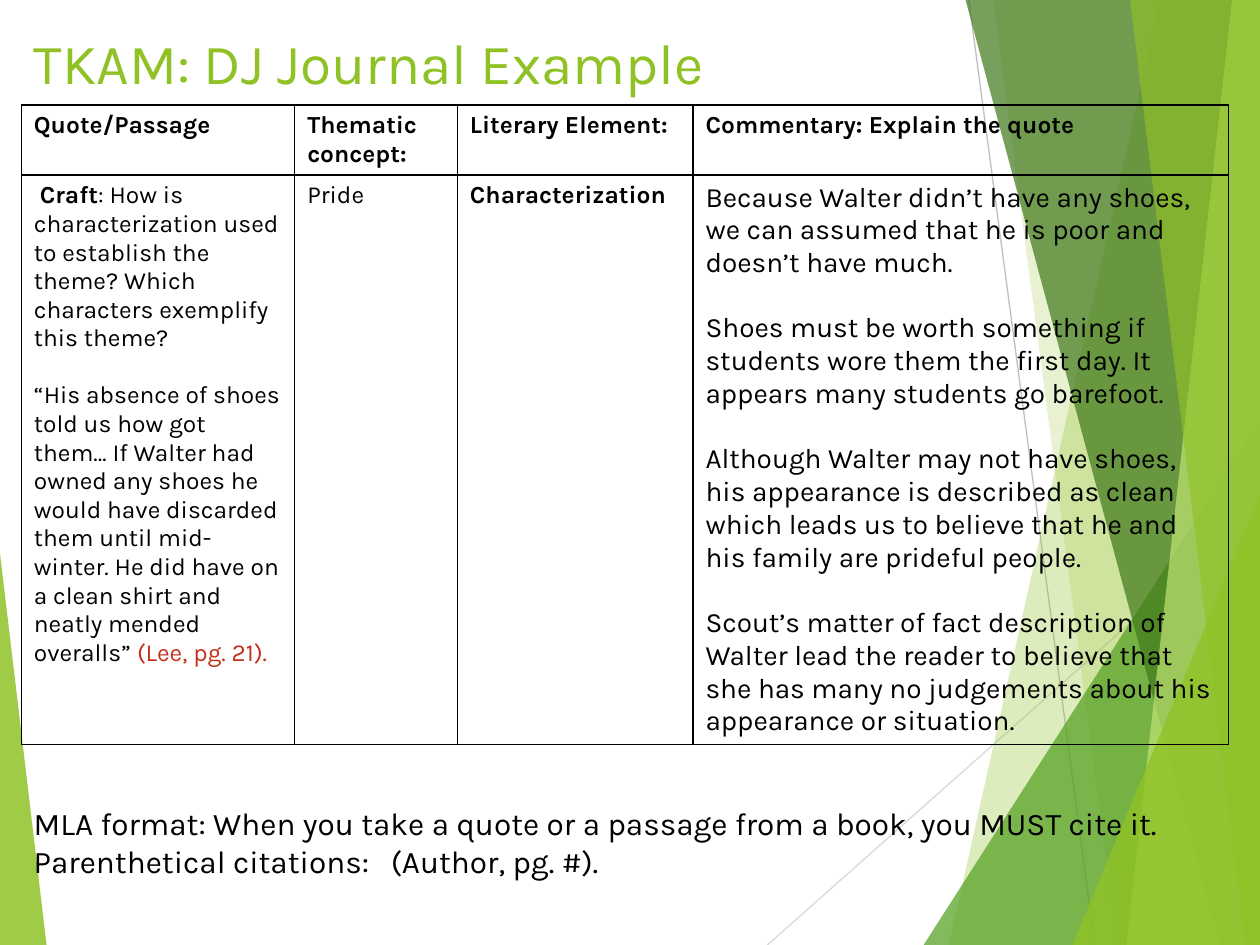
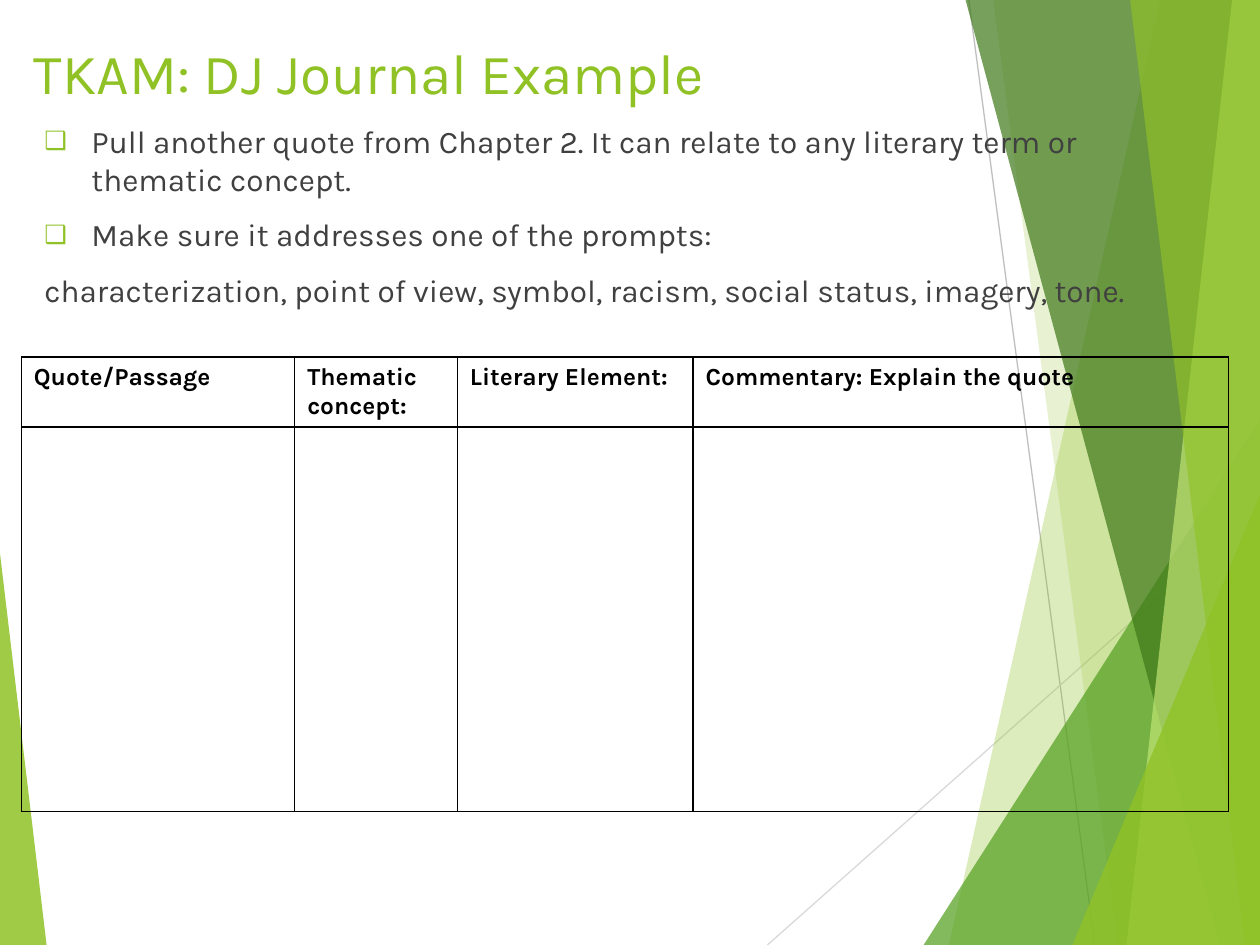
import pptx
import pptx.dml.color
import pptx.enum.shapes
import pptx.enum.text
import pptx.oxml
import pptx.oxml.ns
import pptx.util
from dataclasses import dataclass
from lxml import etree

Cm = pptx.util.Cm
Pt = pptx.util.Pt
qn = pptx.oxml.ns.qn
RGBColor = pptx.dml.color.RGBColor


@dataclass(frozen=True)
class Theme:
    font: str = "Karla"
    lime: str = "90C226"
    green: str = "54A021"
    forest: str = "3F7819"
    pale: str = "C0E474"
    ink: str = "000000"
    body: str = "404040"
    citation: str = "C42F1A"
    title_size: float = 32.4
    text_size: int = 18
    comment_size: int = 16
    cell_size: int = 14


theme = Theme()
TITLE = "TKAM: DJ Journal Example"
WIDTH, HEIGHT = 25.4, 19.05


def format_text(text_frame, size, colour=theme.ink, bold=False, space_before=0):
    """Format every run; the spacing goes above all paragraphs but the first."""
    for index, paragraph in enumerate(text_frame.paragraphs):
        paragraph.alignment = pptx.enum.text.PP_ALIGN.LEFT
        paragraph.space_before = Pt(space_before if index else 0)
        for run in paragraph.runs:
            run.font.name = theme.font
            run.font.size = Pt(size)
            run.font.bold = bold
            run.font.color.rgb = RGBColor.from_string(colour)


def add_journal_table(slide, top, answer_height):
    """Add the four-column journal grid with its header row."""
    headers = ["Quote/Passage", "Thematic concept:", "Literary Element:",
               "Commentary: Explain the quote"]
    column_widths = [5.51, 3.28, 4.75, 10.8]
    row_heights = [1.41, answer_height]
    table = slide.shapes.add_table(
        2, 4, Cm(0.43), Cm(top), Cm(sum(column_widths)), Cm(sum(row_heights))).table
    table.first_row = False
    table.horz_banding = False
    for column, width in zip(table.columns, column_widths):
        column.width = Cm(width)
    for row, height in zip(table.rows, row_heights):
        row.height = Cm(height)
    for cell in table.iter_cells():
        cell.fill.background()
        properties = cell._tc.get_or_add_tcPr()
        for position, side in enumerate(["lnL", "lnR", "lnT", "lnB"]):
            border = etree.Element(qn(f"a:{side}"), w=str(Pt(1)))
            fill = etree.SubElement(border, qn("a:solidFill"))
            etree.SubElement(fill, qn("a:srgbClr"), val=theme.ink)
            properties.insert(position, border)
    for cell, header in zip(table.rows[0].cells, headers):
        cell.text_frame.text = header
        format_text(cell.text_frame, theme.cell_size, bold=True)
    return table


presentation = pptx.Presentation()
presentation.slide_width = Cm(WIDTH)
presentation.slide_height = Cm(HEIGHT)
example_slide = presentation.slides.add_slide(presentation.slide_layouts[5])
practice_slide = presentation.slides.add_slide(presentation.slide_layouts[1])

# Background facets, drawn once and moved to the slide master
facets = []
for start_x, start_y, end_x, colour in [(19.53, 0, 22.07, "BFBFBF"),
                                        (WIDTH, 10.24, 15.47, "D9D9D9")]:
    line = example_slide.shapes.add_connector(
        pptx.enum.shapes.MSO_CONNECTOR.STRAIGHT,
        Cm(start_x), Cm(start_y), Cm(end_x), Cm(HEIGHT))
    line.line.color.rgb = RGBColor.from_string(colour)
    line.line.width = Pt(0.75)
    etree.SubElement(line.element.spPr, qn("a:effectLst"))
    facets.append(line)

# Bands: x at the top and bottom; triangles: left, top, right, apex
facet_plan = [
    ("band", (23.39, 19.13), theme.lime, 30),
    ("band", (20.02, 22.53), theme.lime, 20),
    ("triangle", (18.62, 8.46, WIDTH, 1), theme.green, 72),
    ("band", (19.46, 24.59), theme.forest, 70),
    ("band", (24.84, 22.71), theme.pale, 70),
    ("band", (22.78, 25.1), theme.lime, 65),
    ("triangle", (21.62, 9.98, WIDTH, 1), theme.lime, 80),
    ("triangle", (0, 11.15, 0.94, 0), theme.lime, 85),
]
for kind, geometry, colour, opacity in facet_plan:
    if kind == "band":
        top_x, bottom_x = geometry
        builder = example_slide.shapes.build_freeform(Cm(top_x), Cm(-0.02))
        builder.add_line_segments([(Cm(WIDTH), Cm(-0.02)), (Cm(WIDTH), Cm(HEIGHT)),
                                   (Cm(bottom_x), Cm(HEIGHT))], close=True)
        facet = builder.convert_to_shape()
    else:
        left, top, right, apex = geometry
        facet = example_slide.shapes.add_shape(
            pptx.enum.shapes.MSO_SHAPE.ISOSCELES_TRIANGLE,
            Cm(left), Cm(top), Cm(right - left), Cm(HEIGHT - top))
        facet.adjustments[0] = apex
    facet.shadow.inherit = False
    facet.line.fill.background()
    facet.fill.solid()
    facet.fill.fore_color.rgb = RGBColor.from_string(colour)
    colour_element = facet.element.spPr.find(".//" + qn("a:srgbClr"))
    etree.SubElement(colour_element, qn("a:alpha"), val=str(opacity * 1000))
    facets.append(facet)

master_tree = presentation.slide_master.shapes.element
for index, facet in enumerate(facets):
    facet.element[0][0].set("id", str(100 + index))
    master_tree.insert(2 + index, facet.element)

# Titles
for slide, top, height in [(example_slide, 0.43, 1.27), (practice_slide, 0.64, 1.07)]:
    title = slide.shapes.title
    title.left, title.top, title.width, title.height = Cm(0.43), Cm(top), Cm(17.9), Cm(height)
    title.text_frame.text = TITLE
    title.text_frame.auto_size = pptx.enum.text.MSO_AUTO_SIZE.NONE
    title.text_frame.vertical_anchor = pptx.enum.text.MSO_ANCHOR.TOP
    format_text(title.text_frame, theme.title_size, theme.lime)

# Slide 1: completed journal entry
journal = add_journal_table(example_slide, 2.12, 11.46)
quote_cell, concept_cell, element_cell, commentary_cell = journal.rows[1].cells

quote_cell.text_frame.text = (
    " \n“His absence of shoes told us how got them… If Walter had owned any shoes he "
    "would have discarded them until mid-winter. He did have on a clean shirt and "
    "neatly mended overalls” ")
prompt, quote = quote_cell.text_frame.paragraphs
craft = prompt.add_run()
craft.text = "Craft"
prompt.add_run().text = (": How is characterization used to establish the theme? "
                         "Which characters exemplify this theme?")
citation = quote.add_run()
citation.text = "(Lee, pg. 21)."
format_text(quote_cell.text_frame, theme.cell_size, space_before=16.4)
craft.font.bold = True
citation.font.color.rgb = RGBColor.from_string(theme.citation)

concept_cell.text_frame.text = "Pride"
format_text(concept_cell.text_frame, theme.cell_size)
element_cell.text_frame.text = "Characterization"
format_text(element_cell.text_frame, theme.cell_size, bold=True)

commentary_cell.text_frame.text = "\n".join([
    "Because Walter didn’t have any shoes, we can assumed that he is poor and "
    "doesn’t have much.",
    "Shoes must be worth something if students wore them the first day. It appears "
    "many students go barefoot.",
    "Although Walter may not have shoes, his appearance is described as clean which "
    "leads us to believe that he and his family are prideful people.",
    "Scout’s matter of fact description of Walter lead the reader to believe that she "
    "has many no judgements about his appearance or situation.",
])
format_text(commentary_cell.text_frame, theme.comment_size, space_before=18.7)

# Slide 1: citation rule, with a tab stop before the pattern
citation_rule = example_slide.shapes.add_textbox(Cm(0.43), Cm(16.08), Cm(23.93), Cm(1.8))
citation_rule.text_frame.word_wrap = True
citation_rule.text_frame.text = (
    "MLA format: When you take a quote or a passage from a book, you MUST cite it.\n"
    "Parenthetical citations:\t(Author, pg. #).")
format_text(citation_rule.text_frame, theme.text_size)
pattern_properties = citation_rule.text_frame.paragraphs[1]._p.get_or_add_pPr()
tab_stops = etree.SubElement(pattern_properties, qn("a:tabLst"))
etree.SubElement(tab_stops, qn("a:tab"), pos=str(Cm(7.2)), algn="l")

# Slide 2: instructions
instructions = practice_slide.placeholders[1]
instructions.left, instructions.top = Cm(0.64), Cm(2.34)
instructions.width, instructions.height = Cm(23.29), Cm(10.77)
instructions.text_frame.auto_size = pptx.enum.text.MSO_AUTO_SIZE.NONE
instructions.text_frame.text = (
    "Pull another quote from Chapter 2. It can relate to any literary term or "
    "thematic concept.\n"
    "Make sure it addresses one of the prompts:\n"
    "characterization, point of view, symbol, racism, social status, imagery, tone.")
format_text(instructions.text_frame, theme.text_size, theme.body, space_before=10)
for paragraph, bulleted in zip(instructions.text_frame.paragraphs, [True, True, False]):
    properties = paragraph._p.get_or_add_pPr()
    indent = Cm(0.95) if bulleted else 0
    properties.set("marL", str(indent))
    properties.set("indent", str(-indent))
    if bulleted:
        bullet_colour = etree.SubElement(properties, qn("a:buClr"))
        etree.SubElement(bullet_colour, qn("a:srgbClr"), val=theme.lime)
        etree.SubElement(properties, qn("a:buSzPct"), val="80000")
        etree.SubElement(properties, qn("a:buChar"), char="❑")
    else:
        etree.SubElement(properties, qn("a:buNone"))

# Slide 2: journal left open for the answers
add_journal_table(practice_slide, 7.2, 7.75)

presentation.save("out.pptx")
